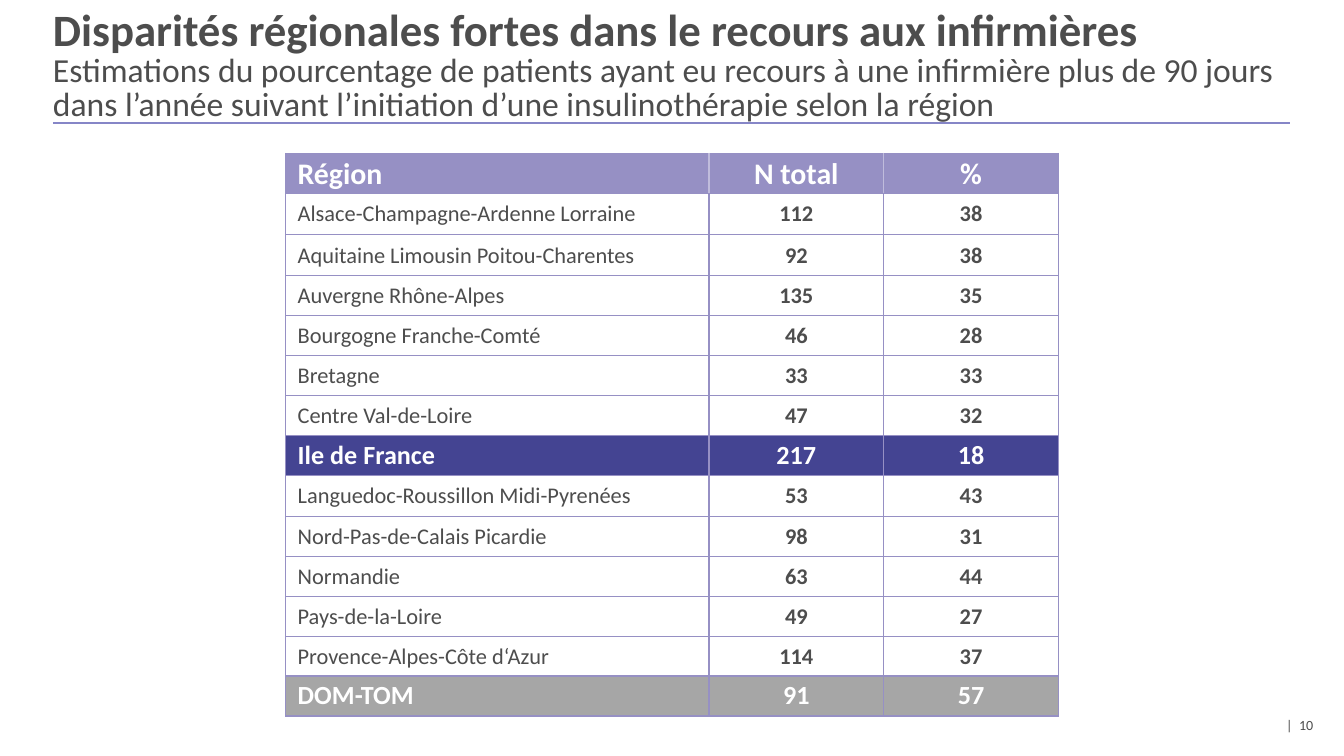
"""Builds the slide on regional differences in the use of nurses."""
from dataclasses import dataclass

from lxml import etree
from pptx import Presentation
from pptx.dml.color import RGBColor
from pptx.enum.shapes import MSO_CONNECTOR
from pptx.enum.text import MSO_ANCHOR, MSO_AUTO_SIZE, PP_ALIGN
from pptx.oxml.ns import qn
from pptx.util import Inches, Pt

STRAIGHT = MSO_CONNECTOR.STRAIGHT
MIDDLE, TOP = MSO_ANCHOR.MIDDLE, MSO_ANCHOR.TOP
LEFT, CENTER, JUSTIFY = PP_ALIGN.LEFT, PP_ALIGN.CENTER, PP_ALIGN.JUSTIFY
NO_FIT = MSO_AUTO_SIZE.NONE
WIDE, HIGH = 100, 56.25

TITLE = "Disparités régionales fortes dans le recours aux infirmières"
SUB = (
    "Estimations du pourcentage de patients ayant eu recours à une infirmière "
    "plus de 90 jours dans l’année suivant l’initiation d’une insulinothérapie "
    "selon la région"
)
REGIONS = [
    ("Région", "N total", "%"),
    ("Alsace-Champagne-Ardenne Lorraine", "112", "38"),
    ("Aquitaine Limousin Poitou-Charentes", "92", "38"),
    ("Auvergne Rhône-Alpes", "135", "35"),
    ("Bourgogne Franche-Comté", "46", "28"),
    ("Bretagne", "33", "33"),
    ("Centre Val-de-Loire", "47", "32"),
    ("Ile de France", "217", "18"),
    ("Languedoc-Roussillon Midi-Pyrenées", "53", "43"),
    ("Nord-Pas-de-Calais Picardie", "98", "31"),
    ("Normandie", "63", "44"),
    ("Pays-de-la-Loire", "49", "27"),
    ("Provence-Alpes-Côte d‘Azur", "114", "37"),
    ("DOM-TOM", "91", "57"),
]
HEAD, PARIS, ISLES = 0, 7, 13
TALL = {1, 2, 8}


@dataclass(frozen=True)
class Theme:
    font: str = "Calibri"
    ink: str = "4D4D4D"
    white: str = "FFFFFF"
    rule: str = "8686C7"
    lilac: str = "9690C4"
    pale: str = "C0BCDC"
    navy: str = "444492"
    gray: str = "A6A6A6"
    title: float = 24
    sub: float = 18
    head: float = 16
    strong: float = 14
    body: float = 12
    small: float = 7.5


def unit(count):
    return Inches(count / 10)


def write(para, text, *, font, size, color, bold=False, align=LEFT, lead=None):
    run = para.add_run()
    run.text = text
    run.font.name, run.font.size, run.font.bold = font, Pt(size), bold
    run.font.color.rgb = RGBColor.from_string(color)
    para.alignment = align
    if lead:
        para.line_spacing = Pt(lead)


def inset(box, left=0, right=0):
    box.margin_left, box.margin_right = unit(left), unit(right)
    box.margin_top = box.margin_bottom = 0


def edge(cell, colors):
    props = cell._tc.get_or_add_tcPr()
    for spot, (side, color) in enumerate(zip("LRTB", colors)):
        line = etree.Element(qn(f"a:ln{side}"), w=str(Pt(0.75)))
        fill = etree.SubElement(line, qn("a:solidFill"))
        etree.SubElement(fill, qn("a:srgbClr"), val=color)
        props.insert(spot, line)


class Deck:
    def __init__(self, theme):
        self.theme = theme
        self.show = Presentation()
        self.show.slide_width, self.show.slide_height = unit(WIDE), unit(HIGH)
        self.slide = self.show.slides.add_slide(self.show.slide_layouts[5])

    def title(self, text, sub, x, y, w, h):
        look = self.theme
        shape = self.slide.shapes.title
        shape.left, shape.top, shape.width, shape.height = map(unit, (x, y, w, h))
        frame = shape.text_frame
        frame.word_wrap, frame.auto_size = True, NO_FIT
        frame.vertical_anchor = MIDDLE
        inset(frame)
        para = frame.paragraphs[0]
        style = dict(font=look.font, color=look.ink, lead=18)
        write(para, text, size=look.title, bold=True, **style)
        para.add_line_break()
        write(para, sub, size=look.sub, **style)

    def rule(self, x, y, end):
        line = self.slide.shapes.add_connector(STRAIGHT, *map(unit, (x, y, end, y)))
        line.line.color.rgb = RGBColor.from_string(self.theme.rule)
        line.line.width = Pt(1)
        etree.SubElement(line._element.spPr, qn("a:effectLst"))

    def label(self, text, x, y, w, h):
        look = self.theme
        box = self.slide.shapes.add_textbox(*map(unit, (x, y, w, h)))
        frame = box.text_frame
        frame.word_wrap, frame.vertical_anchor = True, TOP
        inset(frame)
        write(frame.paragraphs[0], text, font=look.font, size=look.small, color=look.ink)

    def table(self, rows, x, y, cols, low, high):
        look = self.theme
        bands = {
            HEAD: (look.lilac, look.head, 20),
            PARIS: (look.navy, look.strong, 17),
            ISLES: (look.gray, look.strong, 17),
        }
        sizes = [high if row in TALL else low for row in range(len(rows))]
        place = map(unit, (x, y, sum(cols), sum(sizes)))
        grid = self.slide.shapes.add_table(len(rows), len(cols), *place).table
        grid.horz_banding = False
        for col, width in zip(grid.columns, cols):
            col.width = unit(width)
        for row, words in enumerate(rows):
            grid.rows[row].height = unit(sizes[row])
            fill, size, lead = bands.get(row, (look.white, look.body, 15))
            start = LEFT if row == ISLES else JUSTIFY
            for col, text in enumerate(words):
                cell = grid.cell(row, col)
                cell.fill.solid()
                cell.fill.fore_color.rgb = RGBColor.from_string(fill)
                cell.vertical_anchor = MIDDLE
                inset(cell, 0.6 if col else 0.9, 0.6)
                inner = look.pale if row == HEAD else look.lilac
                left = inner if col else look.lilac
                right = inner if col < len(cols) - 1 else look.lilac
                edge(cell, (left, right, look.lilac, look.lilac))
                write(cell.text_frame.paragraphs[0], text, font=look.font,
                      size=size, lead=lead, bold=row in bands or col > 0,
                      color=look.white if row in bands else look.ink,
                      align=CENTER if col else start)


def main():
    deck = Deck(Theme())
    deck.rule(3.94, 9.15, 95.97)
    deck.title(TITLE, SUB, 3.94, 0.8, 93.6, 9.2)
    deck.table(REGIONS, 21.25, 11.42, (31.5, 13, 13), 2.97, 3.07)
    deck.label("|  10", 95.7, 53.3, 5.3, 1.9)
    deck.show.save("out.pptx")


if __name__ == "__main__":
    main()
